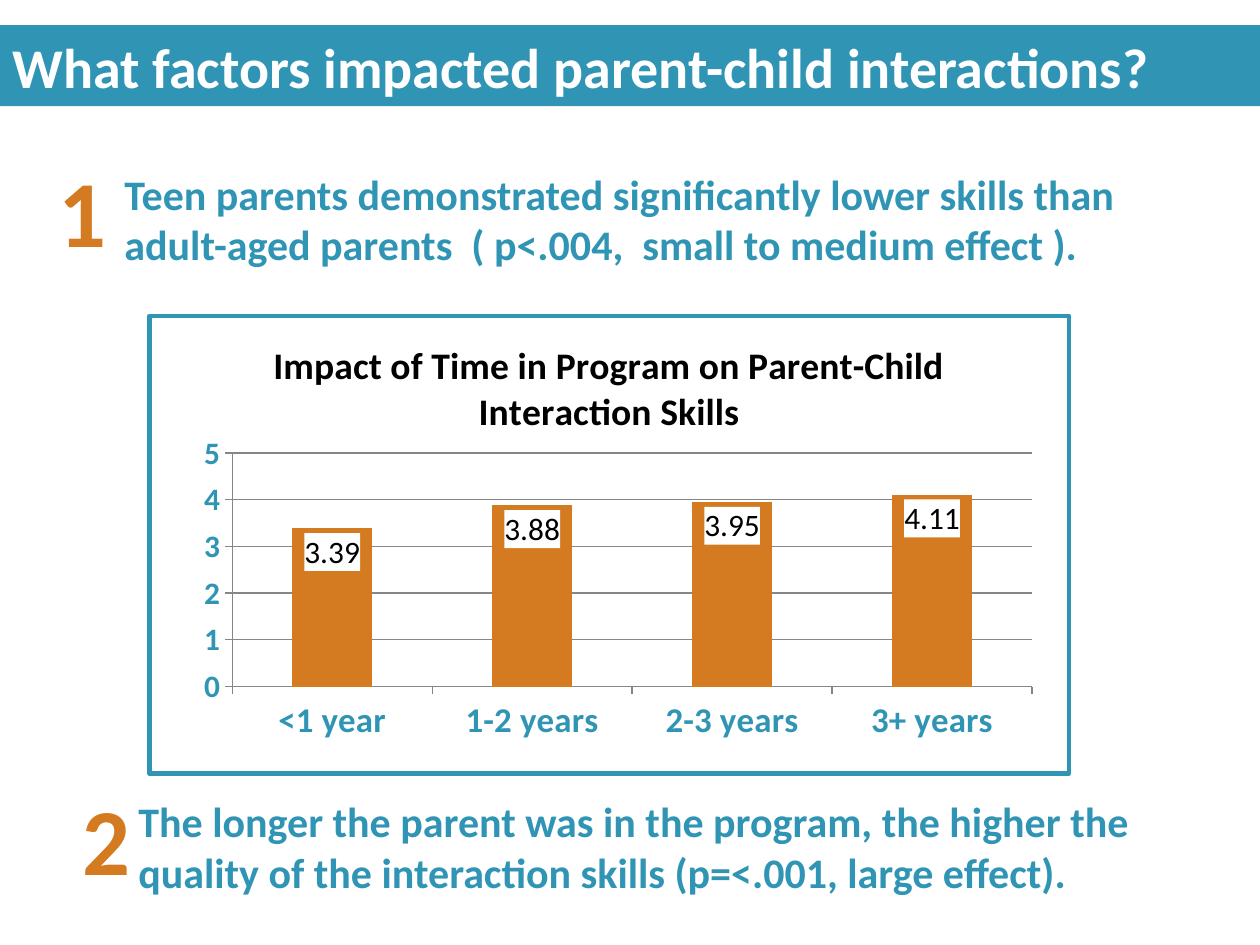
from dataclasses import dataclass

from pptx import Presentation
from pptx.chart.data import CategoryChartData
from pptx.dml.color import RGBColor
from pptx.enum.chart import XL_CHART_TYPE, XL_LABEL_POSITION, XL_TICK_MARK
from pptx.enum.shapes import MSO_SHAPE
from pptx.enum.text import MSO_ANCHOR, PP_ALIGN
from pptx.oxml import parse_xml
from pptx.oxml.ns import nsdecls, qn
from pptx.util import Cm, Pt

COLUMNS = XL_CHART_TYPE.COLUMN_CLUSTERED
INSIDE_END = XL_LABEL_POSITION.INSIDE_END
TICK_OUT, TICK_NONE = XL_TICK_MARK.OUTSIDE, XL_TICK_MARK.NONE
RECTANGLE = MSO_SHAPE.RECTANGLE
MIDDLE = MSO_ANCHOR.MIDDLE
LEFT, CENTER = PP_ALIGN.LEFT, PP_ALIGN.CENTER


@dataclass(frozen=True)
class Theme:
    """Colours, font and type sizes of the deck."""
    teal: str = "3095B4"
    orange: str = "D47B22"
    white: str = "FFFFFF"
    black: str = "000000"
    grid: str = "868686"
    font: str = "Calibri"
    banner: float = 32
    number: float = 54
    finding: float = 24
    chart_title: float = 21.6
    category: float = 20
    chart: float = 18


@dataclass(frozen=True)
class Box:
    """A rectangle in centimetres."""
    left: float
    top: float
    width: float
    height: float

    def lengths(self):
        """Return the four sides as lengths."""
        return [Cm(side) for side in (self.left, self.top, self.width, self.height)]


THEME = Theme()


def style_font(font, size, color, bold=True):
    """Set face, size, colour and weight of a font."""
    font.name = THEME.font
    font.size = Pt(size)
    font.bold = bold
    font.color.rgb = RGBColor.from_string(color)


def write(frame, text, size, color, align=LEFT):
    """Write one styled run into the first paragraph of a frame."""
    para = frame.paragraphs[0]
    para.alignment = align
    span = para.add_run()
    span.text = text
    style_font(span.font, size, color)


def add_banner(page, box, text):
    """Add the full-width title bar."""
    bar = page.shapes.add_shape(RECTANGLE, *box.lengths())
    bar.shadow.inherit = False
    bar.fill.solid()
    bar.fill.fore_color.rgb = RGBColor.from_string(THEME.teal)
    bar.line.fill.background()
    bar.text_frame.word_wrap = True
    bar.text_frame.vertical_anchor = MIDDLE
    write(bar.text_frame, text, THEME.banner, THEME.white)


def add_finding(page, box, number, text, number_width, indent):
    """Add a large number with its finding beside it, as one group."""
    drop = 0.3
    group = page.shapes.add_group_shape()
    text_box = Box(box.left + indent, box.top + drop, box.width - indent, box.height - drop)
    finding = group.shapes.add_textbox(*text_box.lengths())
    finding.text_frame.word_wrap = True
    write(finding.text_frame, text, THEME.finding, THEME.teal)
    number_box = Box(box.left, box.top, number_width, box.height)
    figure = group.shapes.add_textbox(*number_box.lengths())
    figure.text_frame.word_wrap = False
    write(figure.text_frame, number, THEME.number, THEME.orange, CENTER)


def set_plot_area(chart, left, top, width, height):
    """Fix the inner plot area, in fractions of the chart."""
    plot_area = chart.element.find(".//" + qn("c:plotArea"))
    for layout in plot_area.findall(qn("c:layout")):
        plot_area.remove(layout)
    sides = "".join(f'<c:{name} val="{value}"/>' for name, value in
                    (("x", left), ("y", top), ("w", width), ("h", height)))
    plot_area.insert(0, parse_xml(
        f'<c:layout {nsdecls("c")}><c:manualLayout><c:layoutTarget val="inner"/>'
        f'<c:xMode val="edge"/><c:yMode val="edge"/>{sides}</c:manualLayout></c:layout>'))


def shape_properties(content):
    """Return a chart shape-properties element around the given XML."""
    return parse_xml(f'<c:spPr {nsdecls("c", "a")}>{content}</c:spPr>')


def style_labels(chart, series):
    """Show values inside the column ends on a translucent white ground."""
    labels = series.data_labels
    labels.show_value = True
    labels.position = INSIDE_END
    style_font(labels.font, THEME.chart, THEME.black, False)
    element = chart.element.find(".//" + qn("c:dLbls"))
    element.find(qn("c:txPr")).addprevious(shape_properties(
        f'<a:solidFill><a:srgbClr val="{THEME.white}"><a:alpha val="60000"/>'
        '</a:srgbClr></a:solidFill>'))


def add_skills_chart(page, box, title, categories, values):
    """Add the framed column chart of interaction skills."""
    data = CategoryChartData()
    data.categories = categories
    data.add_series("Series 1", values)
    chart = page.shapes.add_chart(COLUMNS, *box.lengths(), data).chart
    style_font(chart.font, THEME.chart, THEME.black, False)
    chart.has_legend = False
    chart.has_title = True
    write(chart.chart_title.text_frame, title, THEME.chart_title, THEME.black, CENTER)
    chart.chart_title.include_in_layout = False

    grid = RGBColor.from_string(THEME.grid)
    for axis, size in ((chart.category_axis, THEME.category), (chart.value_axis, THEME.chart)):
        style_font(axis.tick_labels.font, size, THEME.teal)
        axis.major_tick_mark = TICK_OUT
        axis.minor_tick_mark = TICK_NONE
        axis.format.line.color.rgb = grid
        axis.format.line.width = Pt(0.75)
    scale = chart.value_axis
    scale.minimum_scale, scale.maximum_scale, scale.major_unit = 0, 5, 1
    scale.has_major_gridlines = True
    scale.major_gridlines.format.line.color.rgb = grid
    scale.major_gridlines.format.line.width = Pt(0.75)

    plot = chart.plots[0]
    plot.gap_width = 150
    plot.vary_by_categories = False
    series = plot.series[0]
    series.format.fill.solid()
    series.format.fill.fore_color.rgb = RGBColor.from_string(THEME.orange)
    style_labels(chart, series)
    set_plot_area(chart, 0.09, 0.3, 0.87, 0.51)
    chart.element.find(qn("c:chart")).addnext(shape_properties(
        f'<a:noFill/><a:ln w="{Pt(2.5)}"><a:solidFill><a:srgbClr val="{THEME.teal}"/>'
        '</a:solidFill></a:ln>'))


def main():
    """Build the slide and save the deck."""
    deck = Presentation()
    deck.slide_width, deck.slide_height = Cm(25.4), Cm(19.05)
    page = deck.slides.add_slide(deck.slide_layouts[6])
    add_banner(page, Box(0, 0.51, 25.4, 1.63),
               "What factors impacted parent-child interactions?")
    add_skills_chart(page, Box(2.97, 6.32, 18.62, 9.32),
                     "Impact of Time in Program on Parent-Child Interaction Skills",
                     ("<1 year", "1-2 years", "2-3 years", "3+ years"),
                     (3.39, 3.88, 3.95, 4.11))
    add_finding(page, Box(0.91, 2.97, 23.58, 2.57), "1",
                "Teen parents demonstrated significantly lower skills than "
                "adult-aged parents  ( p<.004,  small to medium effect ).", 1.5, 1.35)
    add_finding(page, Box(1.42, 15.62, 22.56, 2.57), "2",
                "The longer the parent was in the program, the higher the "
                "quality of the interaction skills (p=<.001, large effect).", 1.4, 1.12)
    deck.save("out.pptx")


if __name__ == "__main__":
    main()
